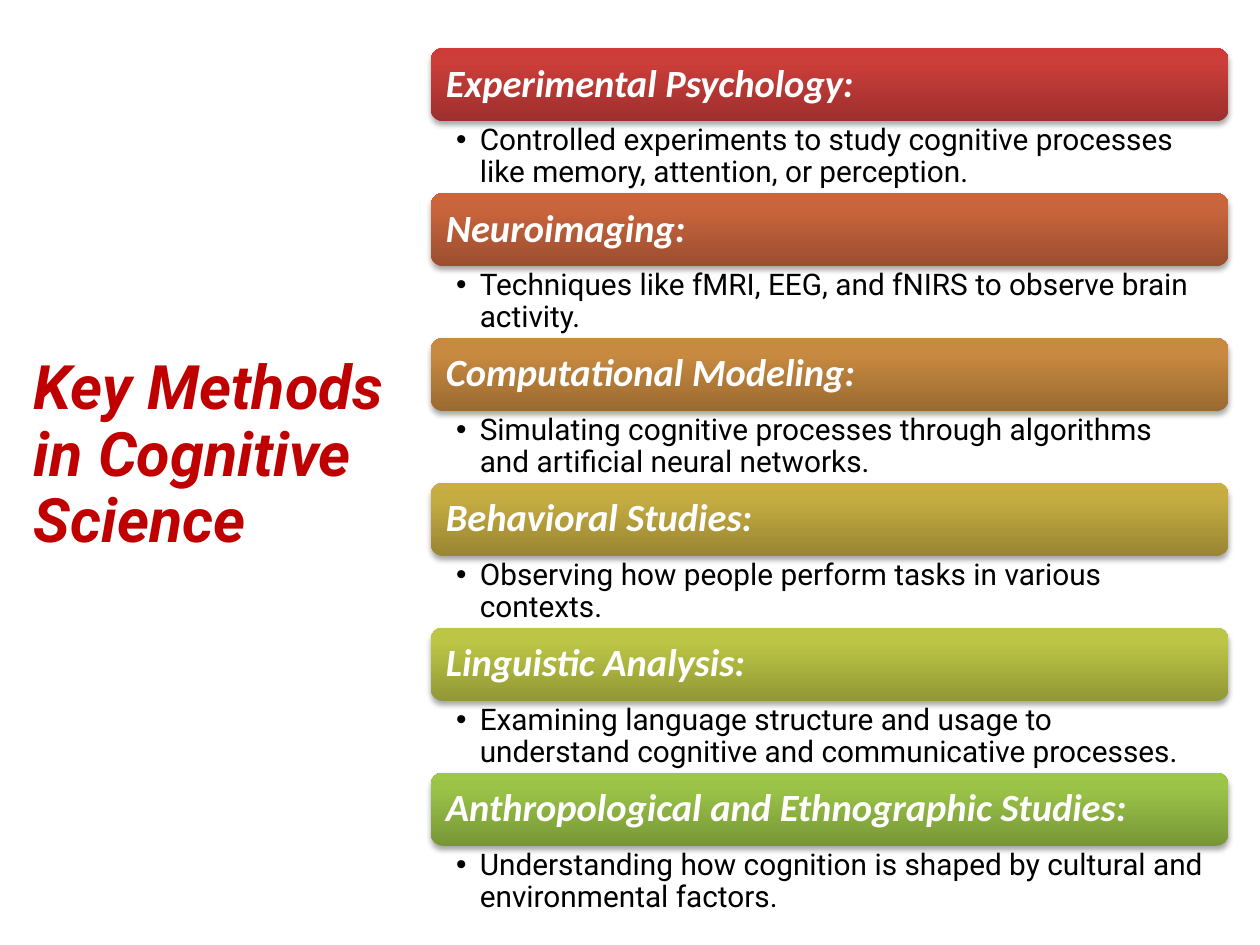
from copy import deepcopy

from lxml.etree import SubElement
from pptx import Presentation
from pptx.dml.color import RGBColor
from pptx.enum.shapes import MSO_SHAPE
from pptx.enum.text import MSO_ANCHOR, MSO_AUTO_SIZE, PP_ALIGN
from pptx.oxml.ns import qn
from pptx.util import Pt

RED = RGBColor(0xC0, 0x00, 0x00)
WHITE = RGBColor(0xFF, 0xFF, 0xFF)
BLACK = RGBColor(0x00, 0x00, 0x00)

# Heading, description, gradient colours from the bottom of the bar to its top
METHODS = [
    ("Experimental Psychology:",
     "Controlled experiments to study cognitive processes like memory, attention, or perception.",
     (RGBColor(0x9C, 0x2F, 0x2D), RGBColor(0xCB, 0x3E, 0x3A), RGBColor(0xCE, 0x3B, 0x37))),
    ("Neuroimaging:",
     "Techniques like fMRI, EEG, and fNIRS to observe brain activity.",
     (RGBColor(0x9B, 0x4E, 0x2F), RGBColor(0xC9, 0x65, 0x3D), RGBColor(0xCD, 0x64, 0x3A))),
    ("Computational Modeling:",
     "Simulating cognitive processes through algorithms and artificial neural networks.",
     (RGBColor(0x9A, 0x6A, 0x31), RGBColor(0xC8, 0x8A, 0x40), RGBColor(0xCB, 0x8B, 0x3D))),
    ("Behavioral Studies:",
     "Observing how people perform tasks in various contexts.",
     (RGBColor(0x99, 0x85, 0x33), RGBColor(0xC6, 0xAD, 0x42), RGBColor(0xCA, 0xAF, 0x40))),
    ("Linguistic Analysis:",
     "Examining language structure and usage to understand cognitive and communicative processes.",
     (RGBColor(0x91, 0x98, 0x35), RGBColor(0xBC, 0xC5, 0x45), RGBColor(0xBF, 0xC8, 0x43))),
    ("Anthropological and Ethnographic Studies:",
     "Understanding how cognition is shaped by cultural and environmental factors.",
     (RGBColor(0x77, 0x97, 0x37), RGBColor(0x9B, 0xC3, 0x48), RGBColor(0x9D, 0xC7, 0x46))),
]
GRADIENT_POSITIONS = (0, 0.8, 1)

LIST_LEFT, LIST_TOP, LIST_WIDTH = 246.2, 27.5, 455.8
BAR_HEIGHT, DETAIL_HEIGHT = 41.8, 41
ROW_PITCH = BAR_HEIGHT + DETAIL_HEIGHT


class MethodsPage:
    heading_font = "Calibri"
    body_font = "Roboto"

    def __init__(self, page):
        self.page = page

    def add_text(self, frame, text, font, size, color, strong=False):
        para = frame.paragraphs[0]
        para.alignment = PP_ALIGN.LEFT
        para.line_spacing = 0.9
        span = para.add_run()
        span.text = text
        span.font.name = font
        span.font.size = Pt(size)
        span.font.color.rgb = color
        span.font.bold = span.font.italic = strong
        return para

    def set_frame(self, frame, anchor, left, top, right, bottom):
        frame.word_wrap = True
        frame.auto_size = MSO_AUTO_SIZE.NONE
        frame.vertical_anchor = anchor
        frame.margin_left, frame.margin_top = Pt(left), Pt(top)
        frame.margin_right, frame.margin_bottom = Pt(right), Pt(bottom)

    def title(self, text, left, top, width, height):
        box = self.page.shapes.title
        box.left, box.top, box.width, box.height = Pt(left), Pt(top), Pt(width), Pt(height)
        self.set_frame(box.text_frame, MSO_ANCHOR.BOTTOM, 7.2, 3.6, 7.2, 3.6)
        self.add_text(box.text_frame, text, self.body_font, 35, RED, strong=True)

    def bar(self, text, colors, top):
        box = self.page.shapes.add_shape(
            MSO_SHAPE.ROUNDED_RECTANGLE, Pt(LIST_LEFT), Pt(top), Pt(LIST_WIDTH), Pt(BAR_HEIGHT))
        box.line.fill.background()
        self.gradient(box, colors)
        self.soft_shadow(box)
        self.set_frame(box.text_frame, MSO_ANCHOR.MIDDLE, 6.6, 6.6, 6.6, 6.6)
        self.add_text(box.text_frame, text, self.heading_font, 22, WHITE, strong=True)

    def gradient(self, box, colors):
        box.fill.gradient()
        box.fill.gradient_angle = 90
        stop_list = next(box._element.spPr.iter(qn("a:gsLst")))
        stop_list.append(deepcopy(stop_list[0]))
        for stop, position, color in zip(box.fill.gradient_stops, GRADIENT_POSITIONS, colors):
            stop.position = position
            stop.color.rgb = color

    def soft_shadow(self, box):
        box.shadow.inherit = False
        effects = box._element.spPr.find(qn("a:effectLst"))
        shadow = SubElement(effects, qn("a:outerShdw"), blurRad=str(Pt(3.1)),
                            dist=str(Pt(1.8)), dir="5400000", rotWithShape="0")
        color = SubElement(shadow, qn("a:srgbClr"), val=str(BLACK))
        SubElement(color, qn("a:alpha"), val="35000")

    def detail(self, text, top):
        box = self.page.shapes.add_textbox(
            Pt(LIST_LEFT), Pt(top), Pt(LIST_WIDTH), Pt(DETAIL_HEIGHT))
        self.set_frame(box.text_frame, MSO_ANCHOR.TOP, 14.5, 2.2, 12.2, 2.2)
        para = self.add_text(box.text_frame, text, self.body_font, 17, BLACK)
        para.level = 1
        properties = para._p.get_or_add_pPr()
        properties.set("marL", str(Pt(13.5)))
        properties.set("indent", str(-Pt(13.5)))
        SubElement(properties, qn("a:buFont"), typeface="Arial")
        SubElement(properties, qn("a:buChar"), char="•")


def main():
    deck = Presentation()
    deck.slide_width, deck.slide_height = Pt(720), Pt(540)
    title_only = deck.slide_layouts[5]
    methods_page = MethodsPage(deck.slides.add_slide(title_only))
    methods_page.title("Key Methods in Cognitive Science", 12.2, 132.5, 221.8, 188.6)
    for row, (heading, description, colors) in enumerate(METHODS):
        top = LIST_TOP + row * ROW_PITCH
        methods_page.bar(heading, colors, top)
        methods_page.detail(description, top + BAR_HEIGHT)
    deck.save("out.pptx")


if __name__ == "__main__":
    main()
